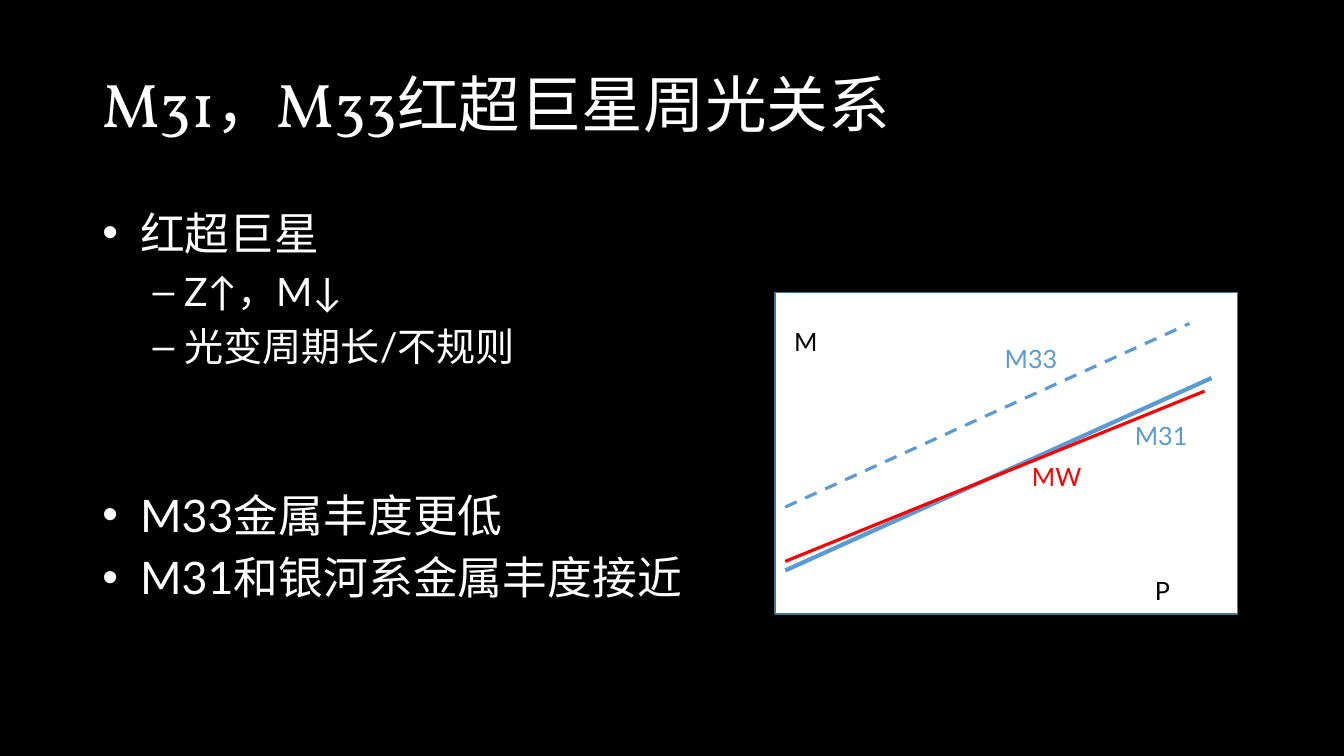
from pptx import Presentation
from pptx.dml.color import RGBColor
from pptx.enum import dml, shapes, text
from pptx.oxml import xmlchemy
from pptx.util import Pt

BLACK = RGBColor(0x00, 0x00, 0x00)
WHITE = RGBColor(0xFF, 0xFF, 0xFF)
BLUE = RGBColor(0x5B, 0x9B, 0xD5)
RED = RGBColor(0xFF, 0x00, 0x00)
FRAME = RGBColor(0x43, 0x73, 0x9E)

TITLE = "M31，M33红超巨星周光关系"
GAP = 78  # extra space above the second group of points
POINTS = [  # level, wording, extra space before
    (0, "红超巨星", 0),
    (1, "Z↑，M↓", 0),
    (1, "光变周期长/不规则", 0),
    (0, "M33金属丰度更低", GAP),
    (0, "M31和银河系金属丰度接近", 0),
]
LEVELS = [  # size, left margin, hanging indent, bullet
    (32, 27, 27, "•"),
    (28, 58.5, 22.5, "–"),
]

PLOT = (553.7, 208.8, 330.5, 229.7)
RELATIONS = [  # start, end, colour, width, dash
    ((560.9, 407.5), (865.4, 270), BLUE, 3, None),
    ((560.9, 401), (860.4, 279.4), RED, 2.25, None),
    ((560.9, 362.2), (849.6, 231.1), BLUE, 2.25, dml.MSO_LINE.DASH),
]
LABELS = [  # wording, left, top, colour
    ("M33", 710.6, 241.9, BLUE),
    ("M31", 803.5, 296.6, BLUE),
    ("MW", 730.1, 326.2, RED),
    ("P", 817.9, 407.5, BLACK),
    ("M", 560.2, 229.7, BLACK),
]


def points(*lengths):
    return [Pt(length) for length in lengths]


def add_text(slide, box, wording, size, color, font="Lato"):
    frame = slide.shapes.add_textbox(*points(*box)).text_frame
    frame.word_wrap = True
    frame.text = wording
    for paragraph in frame.paragraphs:
        style(paragraph, size, color, font)
    return frame


def style(paragraph, size, color, font):
    for run in paragraph.runs:
        run.font.size = Pt(size)
        run.font.name = font
        run.font.color.rgb = color


def add_bullet(paragraph, margin, hanging, mark):
    properties = paragraph._p.get_or_add_pPr()
    properties.set("marL", str(Pt(margin)))
    properties.set("indent", str(-Pt(hanging)))
    for tag, key, value in (("a:buFont", "typeface", "Arial"),
                            ("a:buChar", "char", mark)):
        element = xmlchemy.OxmlElement(tag)
        element.set(key, value)
        properties.append(element)


def add_points(slide):
    wording = "\n".join(line for _, line, _ in POINTS)
    frame = add_text(slide, (66, 143.3, 828, 342.7), wording, 32, WHITE)
    for index, (level, _, extra) in enumerate(POINTS):
        paragraph = frame.paragraphs[index]
        size, margin, hanging, mark = LEVELS[level]
        paragraph.level = level
        if index:
            paragraph.space_before = Pt(0.2 * size + extra)
        add_bullet(paragraph, margin, hanging, mark)
        style(paragraph, size, WHITE, "Lato")


def add_plot(slide):
    panel = slide.shapes.add_shape(shapes.MSO_SHAPE.RECTANGLE, *points(*PLOT))
    panel.shadow.inherit = False
    panel.fill.solid()
    panel.fill.fore_color.rgb = WHITE
    panel.line.color.rgb = FRAME
    panel.line.width = Pt(1)

    for start, end, color, width, dash in RELATIONS:
        relation = slide.shapes.add_connector(
            shapes.MSO_CONNECTOR.STRAIGHT, *points(*start, *end))
        relation.line.color.rgb = color
        relation.line.width = Pt(width)
        if dash:
            relation.line.dash_style = dash
        relation._element.spPr.append(xmlchemy.OxmlElement("a:effectLst"))

    for wording, left, top, color in LABELS:
        add_text(slide, (left, top, 67, 28.8), wording, 18, color)


def main():
    deck = Presentation()
    deck.slide_width, deck.slide_height = points(960, 540)
    slide = deck.slides.add_slide(deck.slide_layouts[6])
    slide.background.fill.solid()
    slide.background.fill.fore_color.rgb = BLACK

    title = add_text(slide, (66, 21.6, 828, 104.4), TITLE, 44, WHITE, "Vollkorn")
    title.vertical_anchor = text.MSO_ANCHOR.MIDDLE
    add_points(slide)
    add_plot(slide)
    deck.save("out.pptx")


if __name__ == "__main__":
    main()
